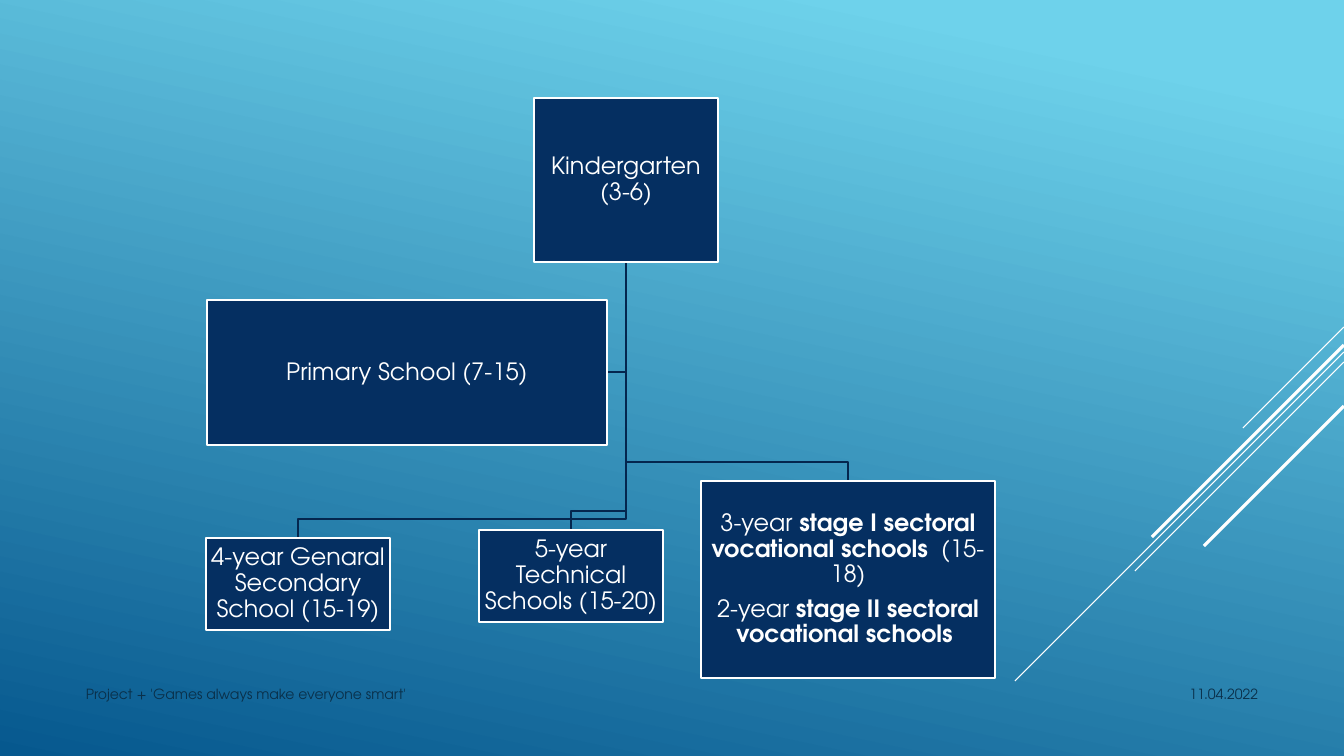
import pptx
import pptx.dml.color
import pptx.enum.shapes
import pptx.enum.text
import pptx.util
from dataclasses import dataclass
from lxml import etree

SCALE = 914400 / 100.8  # EMU per px
ALIGN = pptx.enum.text.PP_ALIGN
ANCHOR = pptx.enum.text.MSO_ANCHOR


@dataclass(frozen=True)
class Theme:
    font: str = "TeX Gyre Adventor"
    sky: str = "6ED2EB"
    sea: str = "06588E"
    box: str = "052F61"
    branch: str = "04264E"
    white: str = "FFFFFF"
    footer: str = "0A304A"
    box_size: int = 17
    footer_size: int = 10
    outline: float = 1.25
    thin: float = 0.75
    thick: float = 2.25


THEME = Theme()

# Each school: left, top, width, height in px, then paragraphs of (text, bold) runs
KINDERGARTEN = (534, 98, 184, 164), [[("Kindergarten (3-6)", False)]]
PRIMARY = (207, 300, 400, 145), [[("Primary School (7-15)", False)]]
LATER_SCHOOLS = [
    ((206, 538, 184, 92), [[("4-year Genaral Secondary School (15-19)", False)]]),
    ((479, 530, 184, 92), [[("5-year Technical Schools (15-20)", False)]]),
    ((701, 481, 294, 197), [
        [("3-year ", False), ("stage I sectoral vocational schools", True),
         ("  (15-18)", False)],
        [("2-year ", False), ("stage II sectoral vocational schools ", True)],
    ]),
]
ELBOW_RISE = 19  # px between a school's top and its branch

# Diagonals run at 45 degrees from the right edge: start height, reach, weight
DIAGONALS = [
    (327, 101, THEME.thin),
    (352, 329, THEME.thin),
    (362, 209, THEME.thin),
    (345, 192, THEME.thick),
    (406, 140, THEME.thick),
]


def px(length):
    return pptx.util.Emu(round(length * SCALE))


def rgb(colour):
    return pptx.dml.color.RGBColor.from_string(colour)


def set_line(line, colour, weight):
    line.color.rgb = rgb(colour)
    line.width = pptx.util.Pt(weight)


def paint_background(page):
    fill = page.background.fill
    fill.gradient()
    fill.gradient_angle = 258
    stops = ((0.1, THEME.sky), (1, THEME.sea))
    for stop, (position, colour) in zip(fill.gradient_stops, stops):
        stop.position = position
        stop.color.rgb = rgb(colour)


def add_diagonal(page, top, reach, weight):
    right = 1344
    line = page.shapes.add_connector(
        pptx.enum.shapes.MSO_CONNECTOR.STRAIGHT,
        px(right), px(top), px(right - reach), px(top + reach))
    set_line(line.line, THEME.white, weight)
    properties = line._element.spPr
    etree.SubElement(properties, pptx.oxml.ns.qn("a:effectLst"))


def add_branch(page, points):
    builder = page.shapes.build_freeform(*points[0], scale=SCALE)
    builder.add_line_segments(points[1:], close=False)
    branch = builder.convert_to_shape()
    branch.shadow.inherit = False
    branch.fill.background()
    set_line(branch.line, THEME.branch, THEME.outline)


def add_run(para, text, size, colour, bold=False):
    span = para.add_run()
    span.text = text
    span.font.name = THEME.font
    span.font.size = pptx.util.Pt(size)
    span.font.color.rgb = rgb(colour)
    span.font.bold = bold


def add_school(page, bounds, paragraphs):
    box = page.shapes.add_shape(
        pptx.enum.shapes.MSO_SHAPE.RECTANGLE, *map(px, bounds))
    box.shadow.inherit = False
    box.fill.solid()
    box.fill.fore_color.rgb = rgb(THEME.box)
    set_line(box.line, THEME.white, THEME.outline)

    frame = box.text_frame
    frame.word_wrap = True
    frame.vertical_anchor = ANCHOR.MIDDLE
    frame.margin_left = frame.margin_right = px(1)
    frame.margin_top = frame.margin_bottom = px(1)
    for index, spans in enumerate(paragraphs):
        para = frame.add_paragraph() if index else frame.paragraphs[0]
        para.alignment = ALIGN.CENTER
        para.line_spacing = 0.9
        para.space_after = pptx.util.Pt(6)
        for text, bold in spans:
            add_run(para, text, THEME.box_size, THEME.white, bold)


def add_footer(page, bounds, text, alignment):
    frame = page.shapes.add_textbox(*map(px, bounds)).text_frame
    frame.word_wrap = True
    para = frame.paragraphs[0]
    para.alignment = alignment
    add_run(para, text, THEME.footer_size, THEME.footer)


def add_branches(page):
    left, top, width, height = KINDERGARTEN[0]
    stem, start = left + width // 2, top + height

    # Side branch to the primary school
    left, top, width, height = PRIMARY[0]
    middle = top + height // 2
    add_branch(page, [(stem, start), (stem, middle), (left + width, middle)])

    # Elbows down to the later schools
    for (left, top, width, _), _ in LATER_SCHOOLS:
        centre, elbow = left + width // 2, top - ELBOW_RISE
        add_branch(page, [(stem, start), (stem, elbow),
                          (centre, elbow), (centre, top)])


def main():
    deck = pptx.Presentation()
    deck.slide_width, deck.slide_height = px(1344), px(756)
    page = deck.slides.add_slide(deck.slide_layouts[6])

    # Backdrop
    paint_background(page)
    for diagonal in DIAGONALS:
        add_diagonal(page, *diagonal)

    # School chart
    add_branches(page)
    for bounds, paragraphs in [KINDERGARTEN, *LATER_SCHOOLS, PRIMARY]:
        add_school(page, bounds, paragraphs)

    # Date and footer
    add_footer(page, (1092, 681, 176, 40), "11.04.2022", ALIGN.RIGHT)
    add_footer(page, (76, 681, 832, 40),
               "Project + 'Games always make everyone smart'", ALIGN.LEFT)

    deck.save("out.pptx")


if __name__ == "__main__":
    main()
